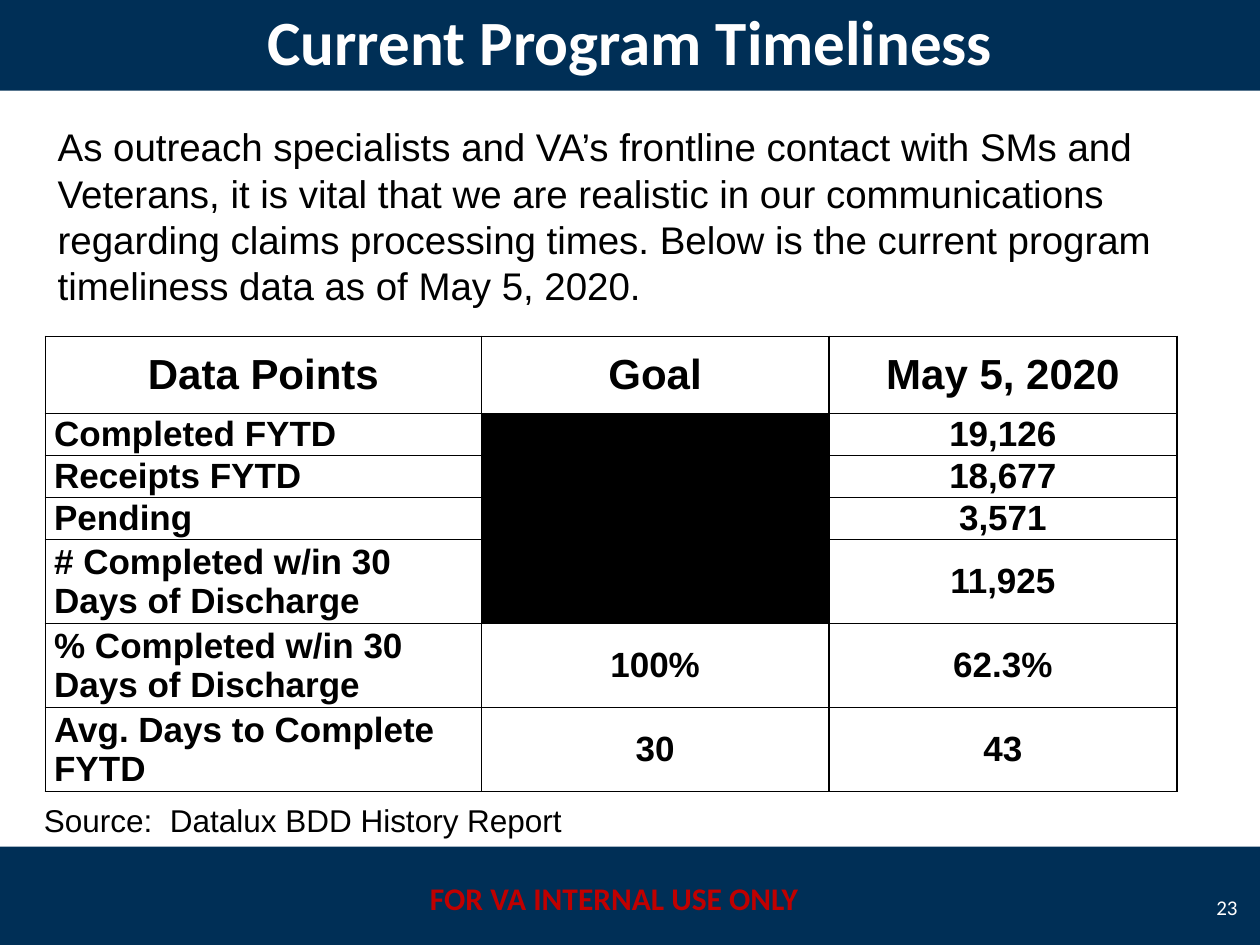
import pptx
import pptx.dml.color
import pptx.enum.shapes
import pptx.enum.text
import pptx.oxml
import pptx.oxml.ns
import pptx.util
from dataclasses import dataclass

Inches = pptx.util.Inches
ALIGN = pptx.enum.text.PP_ALIGN
ANCHOR = pptx.enum.text.MSO_ANCHOR


@dataclass(frozen=True)
class Theme:
    navy: str = "002F56"
    white: str = "FFFFFF"
    black: str = "000000"
    red: str = "C00000"
    heading_font: str = "Calibri"
    body_font: str = "Arial"
    title_size: int = 36
    header_size: int = 24
    intro_size: int = 22
    cell_size: int = 20
    note_size: int = 18
    number_size: int = 12
    border_width: int = 1


THEME = Theme()

INTRO = [
    "As outreach specialists and VA’s frontline contact with SMs and",
    "Veterans, it is vital that we are realistic in our communications "
    "regarding claims processing times. Below is the current program "
    "timeliness data as of May 5, 2020.",
]

# None marks a measure without a goal, shown as a blacked-out cell
TIMELINESS = [
    ("Data Points", "Goal", "May 5, 2020"),
    ("Completed FYTD", None, "19,126"),
    ("Receipts FYTD", None, "18,677"),
    ("Pending", None, "3,571"),
    ("# Completed w/in 30 Days of Discharge", None, "11,925"),
    ("% Completed w/in 30 Days of Discharge", "100%", "62.3%"),
    ("Avg. Days to Complete FYTD", "30", "43"),
]
COLUMN_WIDTHS = (3.46, 2.76, 2.76)
HEADER_HEIGHT, LINE_HEIGHT = 0.61, 1 / 3
ROW_LINES = (1, 1, 1, 2, 2, 2)


def rgb(color):
    return pptx.dml.color.RGBColor.from_string(color)


def write(frame, paragraphs, size, color, font, bold=False, align=ALIGN.LEFT):
    """Fill a text frame, one run to a paragraph."""
    for index, text in enumerate(paragraphs):
        paragraph = frame.paragraphs[0] if index == 0 else frame.add_paragraph()
        paragraph.alignment = align
        run = paragraph.add_run()
        run.text = text
        run.font.name = font
        run.font.size = pptx.util.Pt(size)
        run.font.bold = bold
        run.font.color.rgb = rgb(color)


def add_text(slide, box, paragraphs, size, color, font, anchor=ANCHOR.TOP, **style):
    frame = slide.shapes.add_textbox(*map(Inches, box)).text_frame
    frame.word_wrap = True
    frame.vertical_anchor = anchor
    write(frame, paragraphs, size, color, font, **style)


def add_band(slide, box):
    band = slide.shapes.add_shape(
        pptx.enum.shapes.MSO_SHAPE.RECTANGLE, *map(Inches, box))
    band.shadow.inherit = False
    band.fill.solid()
    band.fill.fore_color.rgb = rgb(THEME.navy)
    band.line.fill.background()


def add_header(slide, box):
    add_band(slide, box)
    title = slide.shapes.title
    title.left, title.top, title.width, title.height = map(Inches, box)
    title.text_frame.word_wrap = True
    title.text_frame.vertical_anchor = ANCHOR.MIDDLE
    write(title.text_frame, ["Current Program Timeliness"], THEME.title_size,
          THEME.white, THEME.heading_font, bold=True, align=ALIGN.CENTER)
    slide.shapes.element.append(title.element)  # bring in front of the band


def add_footer(slide, box):
    left, top, width, height = box
    add_band(slide, box)
    add_text(slide, (left + 3.25, top + 0.21, 3.25, 0.4),
             ["FOR VA INTERNAL USE ONLY"], THEME.note_size, THEME.red,
             THEME.heading_font, bold=True, align=ALIGN.CENTER)
    add_text(slide, (left + width - 0.5, top + 0.28, 0.42, 0.4), ["23"],
             THEME.number_size, THEME.white, THEME.heading_font,
             anchor=ANCHOR.MIDDLE, align=ALIGN.RIGHT)


def fill_cell(cell, color):
    """Set the borders, then the fill, which must follow them in the XML."""
    properties = cell._tc.get_or_add_tcPr()
    width = pptx.util.Pt(THEME.border_width)
    for side in ("lnL", "lnR", "lnT", "lnB"):
        properties.append(pptx.oxml.parse_xml(
            f'<a:{side} {pptx.oxml.ns.nsdecls("a")} w="{width}"><a:solidFill>'
            f'<a:srgbClr val="{THEME.black}"/></a:solidFill></a:{side}>'))
    cell.fill.solid()
    cell.fill.fore_color.rgb = rgb(color)


def add_timeliness_table(slide, box):
    table = slide.shapes.add_table(
        len(TIMELINESS), len(COLUMN_WIDTHS), *map(Inches, box)).table
    table.horz_banding = False
    for column, width in zip(table.columns, COLUMN_WIDTHS):
        column.width = Inches(width)
    heights = [HEADER_HEIGHT] + [lines * LINE_HEIGHT for lines in ROW_LINES]
    for row, height in zip(table.rows, heights):
        row.height = Inches(height)

    for row, values in enumerate(TIMELINESS):
        for column, value in enumerate(values):
            cell = table.cell(row, column)
            cell.margin_left = cell.margin_right = Inches(0.07)
            cell.margin_top = cell.margin_bottom = 0
            cell.vertical_anchor = ANCHOR.MIDDLE
            fill_cell(cell, THEME.black if value is None else THEME.white)
            if value is not None:
                is_label = row > 0 and column == 0
                write(cell.text_frame, [value],
                      THEME.cell_size if row else THEME.header_size,
                      THEME.black, THEME.body_font, bold=True,
                      align=ALIGN.LEFT if is_label else ALIGN.CENTER)


def main():
    presentation = pptx.Presentation()
    presentation.slide_width = Inches(10)
    presentation.slide_height = Inches(7.5)
    slide = presentation.slides.add_slide(presentation.slide_layouts[5])

    add_footer(slide, (0, 6.72, 10, 0.8))
    add_header(slide, (0, -0.08, 10, 0.8))
    # Introduction, data and source note
    add_text(slide, (0.36, 0.93, 9.5, 1.58), INTRO, THEME.intro_size,
             THEME.black, THEME.body_font)
    add_timeliness_table(slide, (0.36, 2.67, 8.98, 3.61))
    add_text(slide, (0.25, 6.31, 6.25, 0.4),
             ["Source:  Datalux BDD History Report"], THEME.note_size,
             THEME.black, THEME.body_font)

    presentation.save("out.pptx")


if __name__ == "__main__":
    main()
